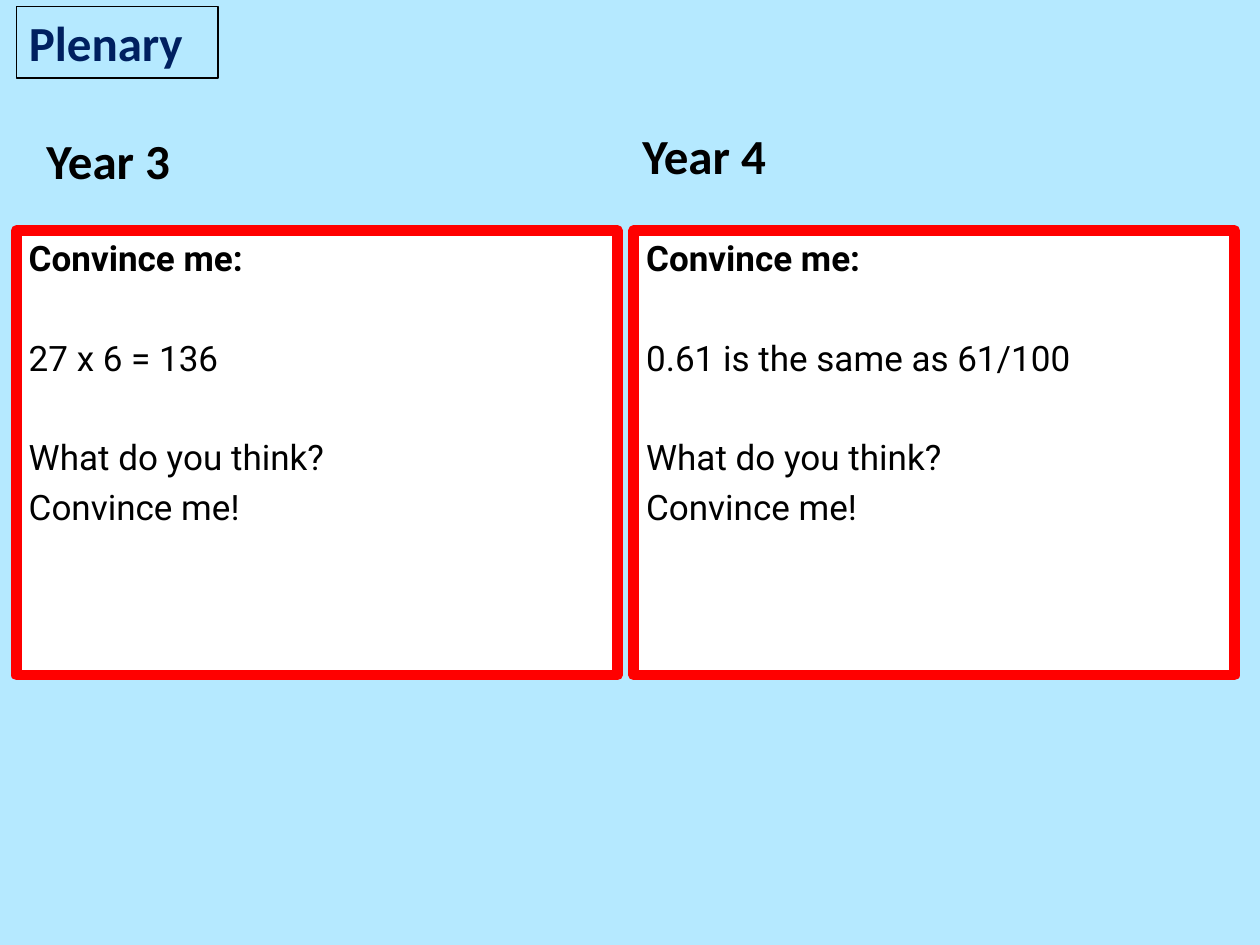
from pptx import Presentation
from pptx.dml.color import RGBColor
from pptx.enum import shapes, text
from pptx.util import Inches, Pt

SKY = RGBColor(0xB5, 0xE9, 0xFF)
NAVY = RGBColor(0x00, 0x20, 0x60)
BLACK = RGBColor(0, 0, 0)
WHITE = RGBColor(0xFF, 0xFF, 0xFF)
RED = RGBColor(0xFF, 0, 0)

LINE_GAP = 4.7
BLANK_LINE_GAP = 32.8  # one 20 pt line plus its spacing


def add_text(tf, words, font="Roboto", size=20, bold=False, color=BLACK, before=0):
    """Fill the first paragraph of a frame, or append one after it."""
    p = tf.add_paragraph() if tf.text else tf.paragraphs[0]
    p.alignment = text.PP_ALIGN.LEFT
    p.space_before = Pt(before)
    r = p.add_run()
    r.text = words
    r.font.name = font
    r.font.size = Pt(size)
    r.font.bold = bold
    r.font.color.rgb = color


def add_heading(tf, words, color=BLACK):
    tf.vertical_anchor = text.MSO_ANCHOR.TOP
    add_text(tf, words, font="Calibri", size=28, bold=True, color=color)


def place_title(slide, left, top, width, height):
    sp = slide.shapes.title
    sp.left, sp.top, sp.width, sp.height = left, top, width, height
    sp.line.color.rgb = BLACK
    sp.line.width = Pt(0.75)
    tf = sp.text_frame
    tf.auto_size = text.MSO_AUTO_SIZE.NONE
    tf.word_wrap = False
    add_heading(tf, "Plenary", color=NAVY)


def add_year_label(slide, words, left, top, width, height):
    tf = slide.shapes.add_textbox(left, top, width, height).text_frame
    tf.word_wrap = True
    add_heading(tf, words)


def add_task_card(slide, statement, left, top, width, height):
    sp = slide.shapes.add_shape(shapes.MSO_SHAPE.RECTANGLE, left, top, width, height)
    sp.shadow.inherit = False
    sp.fill.solid()
    sp.fill.fore_color.rgb = WHITE
    sp.line.color.rgb = RED
    sp.line.width = Pt(6)
    tf = sp.text_frame
    tf.word_wrap = True
    tf.vertical_anchor = text.MSO_ANCHOR.TOP
    add_text(tf, "Convince me:", bold=True)
    add_text(tf, statement, before=BLANK_LINE_GAP)
    add_text(tf, "What do you think?", before=BLANK_LINE_GAP)
    add_text(tf, "Convince me!", before=LINE_GAP)


def main():
    prs = Presentation()
    prs.slide_width, prs.slide_height = Inches(10), Inches(7.5)
    slide = prs.slides.add_slide(prs.slide_layouts[5])
    slide.background.fill.solid()
    slide.background.fill.fore_color.rgb = SKY

    place_title(slide, Inches(0.13), Inches(0.05), Inches(1.6), Inches(0.57))

    # One column per year: label, label position, statement, card left edge
    columns = [
        ("Year 3", 0.27, 0.99, "27 x 6 = 136", 0.13),
        ("Year 4", 5, 0.95, "0.61 is the same as 61/100", 5.03),
    ]
    for year, label_left, label_top, statement, card_left in columns:
        add_year_label(slide, year, Inches(label_left), Inches(label_top),
                       Inches(2.67), Inches(0.57))
        add_task_card(slide, statement, Inches(card_left), Inches(1.83),
                      Inches(4.77), Inches(3.53))

    prs.save("out.pptx")


if __name__ == "__main__":
    main()
